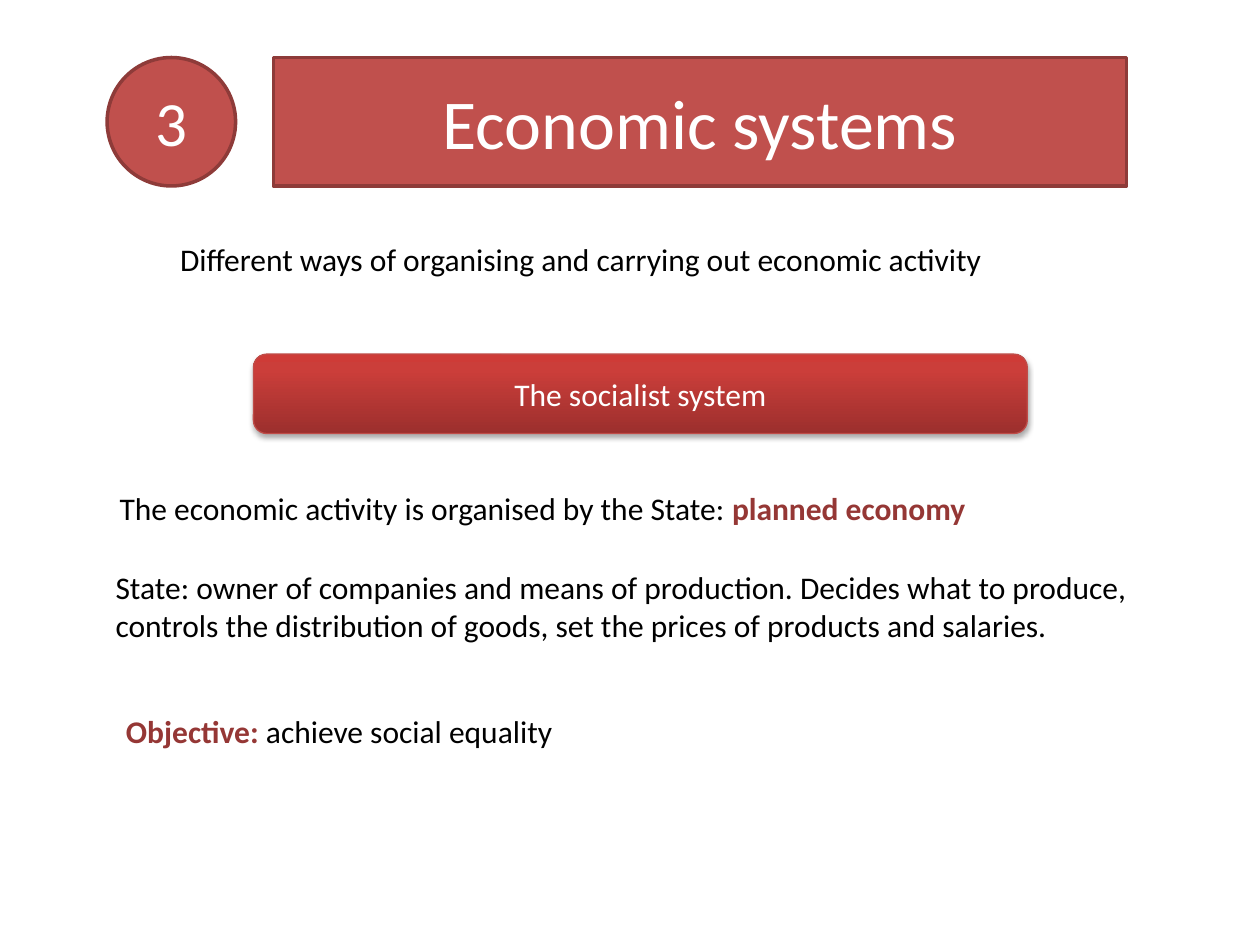
from copy import deepcopy

from lxml import etree
from pptx import Presentation
from pptx.dml.color import RGBColor
from pptx.enum.shapes import MSO_SHAPE
from pptx.enum.text import MSO_ANCHOR, MSO_AUTO_SIZE, PP_ALIGN
from pptx.oxml.ns import qn
from pptx.util import Cm, Pt

CIRCLE = MSO_SHAPE.OVAL
ROUNDED = MSO_SHAPE.ROUNDED_RECTANGLE
MIDDLE = MSO_ANCHOR.MIDDLE
CENTER = PP_ALIGN.CENTER
LEFT = PP_ALIGN.LEFT
NO_FIT = MSO_AUTO_SIZE.NONE
GROW = MSO_AUTO_SIZE.SHAPE_TO_FIT_TEXT

FONT = "Calibri"
BODY_SIZE = 18
WHITE = RGBColor(0xFF, 0xFF, 0xFF)
BLACK = RGBColor(0x00, 0x00, 0x00)
RED = RGBColor(0xC0, 0x50, 0x4D)
RED_EDGE = RGBColor(0x8E, 0x3B, 0x39)
BANNER_EDGE = RGBColor(0xBF, 0x4C, 0x48)
KEYWORD = RGBColor(0x95, 0x37, 0x35)
BANNER_STOPS = [
    (0, RGBColor(0x9C, 0x2F, 0x2D)),
    (0.8, RGBColor(0xCB, 0x3E, 0x3A)),
    (1, RGBColor(0xCE, 0x3B, 0x37)),
]

TITLE = "Economic systems"
UNIT_NUMBER = "3"
SYSTEM_NAME = "The socialist system"
HEADER_TOP, HEADER_HEIGHT = 1.16, 2.59

STATEMENTS = [
    ((3.38, 4.72, 19.2, 1.02),
     [("Different ways of organising and carrying out economic activity", False)]),
    ((2.16, 9.73, 21.34, 1.02),
     [("The economic activity is organised by the State: ", False),
      ("planned economy", True)]),
    ((2.08, 11.33, 21.34, 1.8),
     [("State: owner of companies and means of production. Decides what to "
       "produce, controls the distribution of goods, set the prices of "
       "products and salaries.", False)]),
    ((2.29, 14.22, 21.41, 1.02),
     [("Objective: ", True), ("achieve social equality", False)]),
]


def place(part, box):
    part.left, part.top, part.width, part.height = map(Cm, box)


def write(part, runs, size, align):
    paragraph = part.text_frame.paragraphs[0]
    paragraph.alignment = align
    for words, color, bold in runs:
        run = paragraph.add_run()
        run.text = words
        run.font.name = FONT
        run.font.size = Pt(size)
        run.font.bold = bold
        run.font.color.rgb = color


def outline(part, color, width):
    part.line.color.rgb = color
    part.line.width = Pt(width)


def label(part, words, size):
    part.text_frame.word_wrap = True
    part.text_frame.auto_size = NO_FIT
    part.text_frame.vertical_anchor = MIDDLE
    write(part, [(words, WHITE, False)], size, CENTER)


def fill_header(part, words, size):
    part.fill.solid()
    part.fill.fore_color.rgb = RED
    outline(part, RED_EDGE, 2)
    label(part, words, size)


def shade_banner(banner):
    banner.fill.gradient()
    banner.fill.gradient_angle = 90
    stop_list = banner.element.spPr.find(".//" + qn("a:gsLst"))
    stop_list.append(deepcopy(stop_list[-1]))
    for stop, (position, color) in zip(banner.fill.gradient_stops, BANNER_STOPS):
        stop.position = position
        stop.color.rgb = color


def add_soft_shadow(banner):
    banner.shadow.inherit = False
    effects = banner.element.spPr.find(qn("a:effectLst"))
    shadow = etree.SubElement(
        effects, qn("a:outerShdw"), blurRad=str(Pt(3.1)), dist=str(Pt(1.8)),
        dir="5400000", rotWithShape="0")
    color = etree.SubElement(shadow, qn("a:srgbClr"), val=str(BLACK))
    etree.SubElement(color, qn("a:alpha"), val="35000")


def main():
    deck = Presentation()
    deck.slide_width, deck.slide_height = Cm(25.4), Cm(19.05)
    slide = deck.slides.add_slide(deck.slide_layouts[5])
    shapes = slide.shapes

    title = shapes.title
    place(title, (5.51, HEADER_TOP, 17.2, HEADER_HEIGHT))
    fill_header(title, TITLE, 40)

    badge_box = (2.16, HEADER_TOP, HEADER_HEIGHT, HEADER_HEIGHT)
    badge = shapes.add_shape(CIRCLE, *map(Cm, badge_box))
    badge.shadow.inherit = False
    fill_header(badge, UNIT_NUMBER, 36)

    banner = shapes.add_shape(ROUNDED, *map(Cm, (5.11, 7.14, 15.6, 1.6)))
    shade_banner(banner)
    outline(banner, BANNER_EDGE, 0.75)
    add_soft_shadow(banner)
    label(banner, SYSTEM_NAME, BODY_SIZE)

    for box, phrases in STATEMENTS:
        statement = shapes.add_textbox(*map(Cm, box))
        statement.text_frame.word_wrap = True
        statement.text_frame.auto_size = GROW
        runs = [(words, KEYWORD if key else BLACK, key) for words, key in phrases]
        write(statement, runs, BODY_SIZE, LEFT)

    deck.save("out.pptx")


if __name__ == "__main__":
    main()
